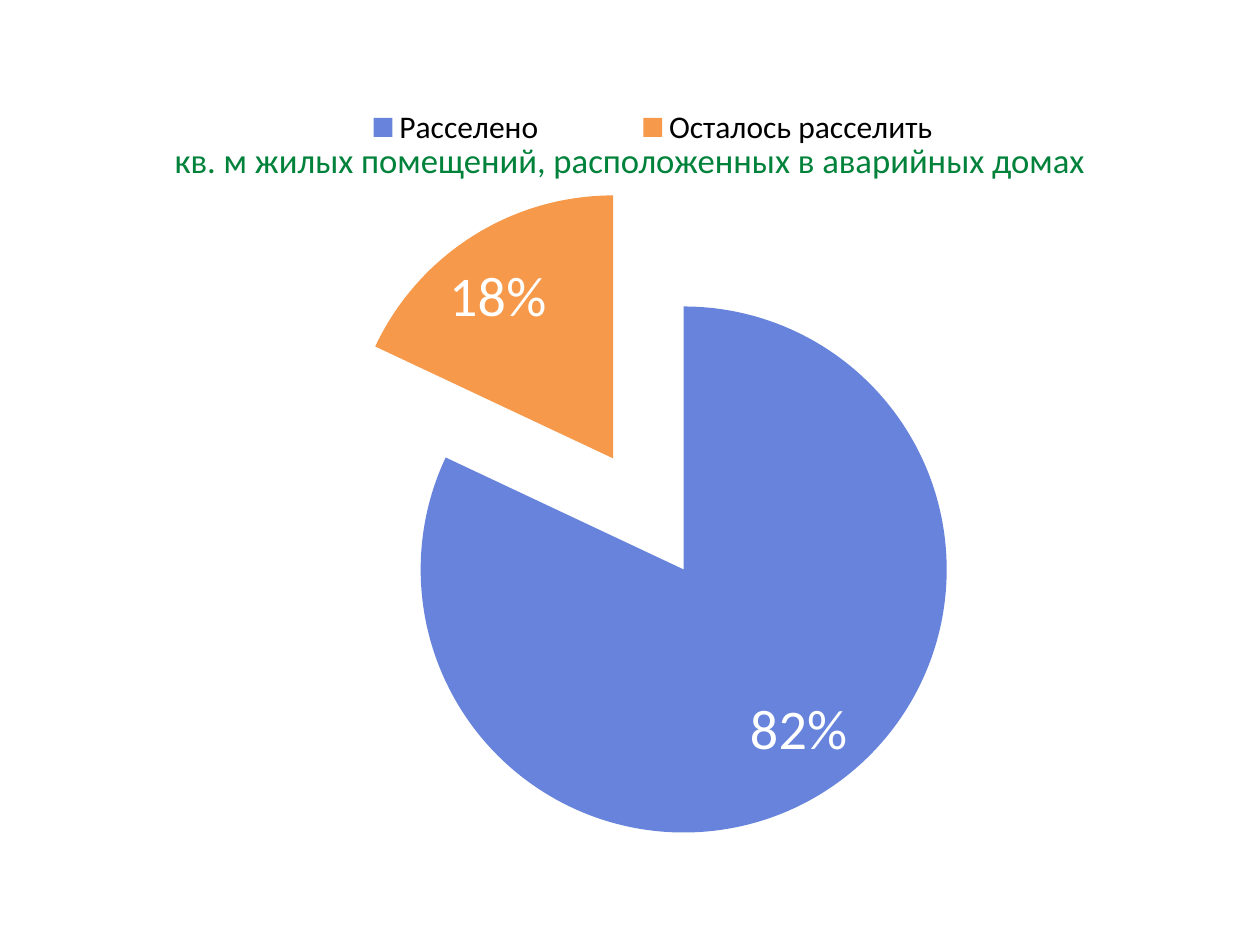
from lxml import etree
from pptx import Presentation
from pptx.chart.data import CategoryChartData
from pptx.dml.color import RGBColor
from pptx.enum.chart import XL_CHART_TYPE, XL_LABEL_POSITION, XL_LEGEND_POSITION
from pptx.enum.text import MSO_ANCHOR, PP_ALIGN
from pptx.oxml.ns import qn
from pptx.util import Pt

PIE = XL_CHART_TYPE.PIE_EXPLODED
BEST_FIT = XL_LABEL_POSITION.BEST_FIT
TOP = XL_LEGEND_POSITION.TOP
MIDDLE, CENTER = MSO_ANCHOR.MIDDLE, PP_ALIGN.CENTER

# Content
TITLE = "кв. м жилых помещений, расположенных в аварийных домах"
SHARES = [("Расселено", 82, "blue"), ("Осталось расселить", 18, "orange")]
COLORS = {"blue": "6783DB", "orange": "F7994B", "green": "00823B",
          "black": "000000", "white": "FFFFFF"}
FONT = "Calibri"
EXPLOSION = 25

# Boxes in px: left, top, width, height
PX = 914400 // 126
SLIDE = (1260, 945)
TITLE_BOX = (63, 135, 1133, 49)
CHART_BOX = (54, 55, 1160, 804)
PLOT_BOX = (320, 185, 658, 658)
LEGEND_BOX = (279, 107, 748, 40)


def emu(box):
    return [v * PX for v in box]


def style(font, size, color):
    for name, value in {"name": FONT, "size": Pt(size), "bold": False}.items():
        setattr(font, name, value)
    font.color.rgb = RGBColor.from_string(COLORS[color])


def set_layout(parent, box, inner=False):
    """Place a chart part by fractions of the chart box."""
    for old in parent.findall(qn("c:layout")):
        parent.remove(old)
    layout = etree.Element(qn("c:layout"))
    manual = etree.SubElement(layout, qn("c:manualLayout"))
    left, top, width, height = CHART_BOX
    values = [("layoutTarget", "inner")] if inner else []
    values += [("xMode", "edge"), ("yMode", "edge"),
               ("x", round((box[0] - left) / width, 3)),
               ("y", round((box[1] - top) / height, 3)),
               ("w", round(box[2] / width, 3)),
               ("h", round(box[3] / height, 3))]
    for tag, value in values:
        etree.SubElement(manual, qn(f"c:{tag}")).set("val", str(value))
    parent.insert(0 if inner else 1, layout)


prs = Presentation()
prs.slide_width, prs.slide_height = emu(SLIDE)
s = prs.slides.add_slide(prs.slide_layouts[6])

# Title
tf = s.shapes.add_textbox(*emu(TITLE_BOX)).text_frame
tf.word_wrap = True
tf.vertical_anchor = MIDDLE
p = tf.paragraphs[0]
p.alignment = CENTER
r = p.add_run()
r.text = TITLE
style(r.font, 19.8, "green")

# Pie chart
data = CategoryChartData()
data.categories = [name for name, _, _ in SHARES]
data.add_series("Series 1", [value for _, value, _ in SHARES])
chart = s.shapes.add_chart(PIE, *emu(CHART_BOX), data).chart
chart.has_title = False
style(chart.font, 18, "black")
plot = chart.plots[0]
plot.vary_by_categories = True
series = plot.series[0]
for i, (_, _, color) in enumerate(SHARES):
    fmt = series.points[i].format
    fmt.fill.solid()
    fmt.fill.fore_color.rgb = RGBColor.from_string(COLORS[color])
    fmt.line.fill.background()
for explosion in series._element.iter(qn("c:explosion")):
    explosion.set("val", str(EXPLOSION))
set_layout(chart._chartSpace.chart.plotArea, PLOT_BOX, inner=True)

# Percentage labels
labels = series.data_labels
for name, value in {"show_percentage": True, "show_value": False,
                    "number_format": "0%", "number_format_is_linked": False,
                    "position": BEST_FIT}.items():
    setattr(labels, name, value)
style(labels.font, 32, "white")

# Legend
chart.has_legend = True
legend = chart.legend
legend.position = TOP
legend.include_in_layout = False
style(legend.font, 18, "black")
set_layout(legend._element, LEGEND_BOX)

prs.save("out.pptx")
